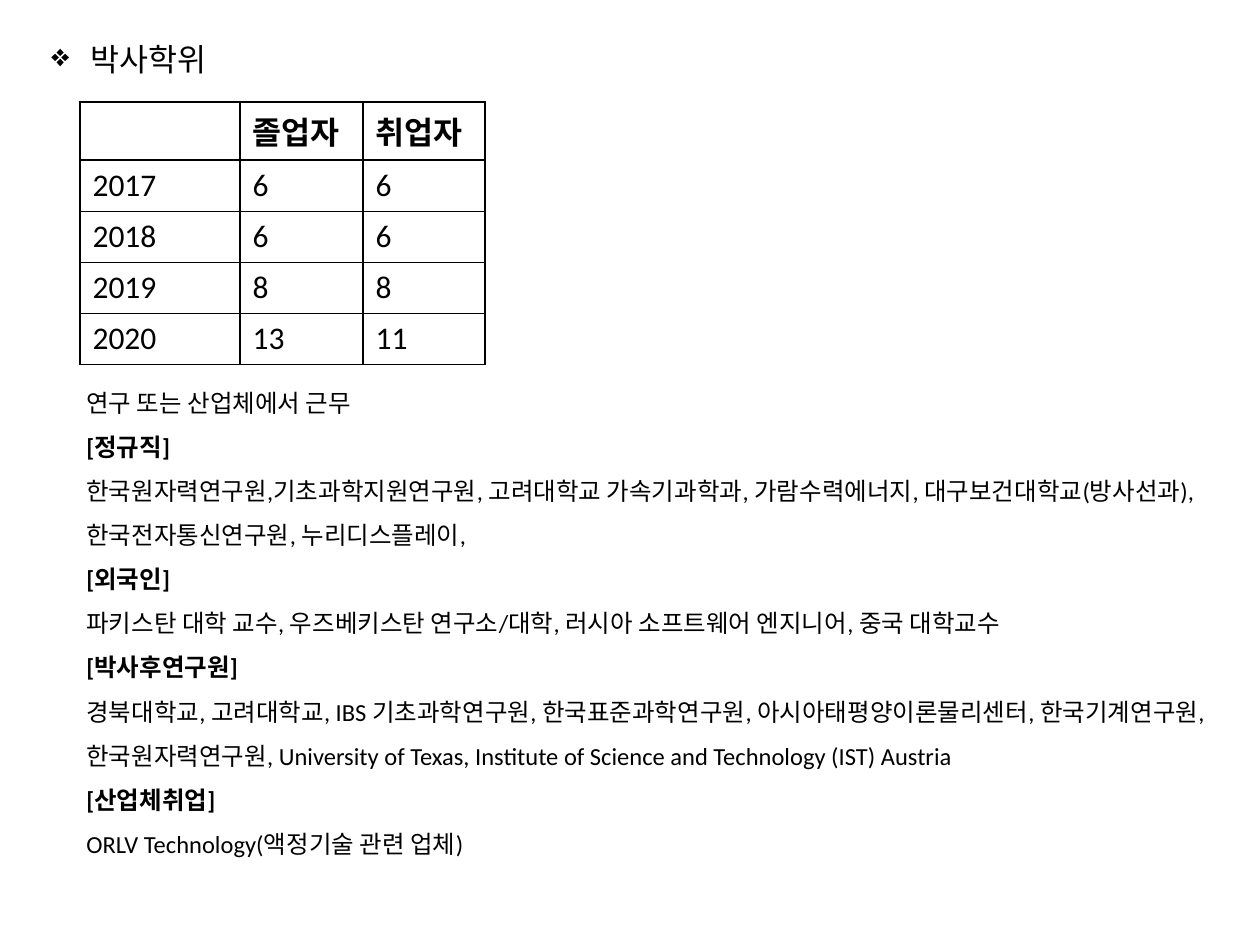
"""Build the slide on doctoral graduates and where they work."""
from lxml.etree import SubElement
from pptx import Presentation
from pptx.dml.color import RGBColor
from pptx.enum.text import MSO_AUTO_SIZE as AutoSize
from pptx.oxml.ns import qn
from pptx.util import Pt

SCALE = 914400 / 126
BLACK = RGBColor(0, 0, 0)
FONT = "Calibri"

HEADING = "박사학위"
HEADING_BOX = (39, 34, 193, 50)
HEADING_INDENT = 39

GRADUATES = [
    ("", "졸업자", "취업자"),
    ("2017", "6", "6"),
    ("2018", "6", "6"),
    ("2019", "8", "8"),
    ("2020", "13", "11"),
]
GRADUATES_AT = (80, 102)
COLUMN_WIDTHS = (160, 123, 122)
HEADER_HEIGHT, YEAR_HEIGHT = 52, 50

CAREERS_BOX = (74, 367, 1169, 498)
CAREERS_INTRO = "연구 또는 산업체에서 근무"
CAREERS = [
    ("[정규직]", "한국원자력연구원,기초과학지원연구원, 고려대학교 가속기과학과, 가람수력에너지, "
     "대구보건대학교(방사선과), 한국전자통신연구원, 누리디스플레이,"),
    ("[외국인]", "파키스탄 대학 교수, 우즈베키스탄 연구소/대학, 러시아 소프트웨어 엔지니어, 중국 대학교수"),
    ("[박사후연구원]", "경북대학교, 고려대학교, IBS 기초과학연구원, 한국표준과학연구원, "
     "아시아태평양이론물리센터, 한국기계연구원, 한국원자력연구원, University of Texas, "
     "Institute of Science and Technology (IST) Austria"),
    ("[산업체취업]", "ORLV Technology(액정기술 관련 업체)"),
]


def px(length):
    return round(length * SCALE)


def write(paragraph, text, size, bold=False):
    paragraph.text = text
    formats = {"name": FONT, "size": Pt(size), "bold": bold}
    for font in [paragraph.font] + [run.font for run in paragraph.runs]:
        for key, value in formats.items():
            setattr(font, key, value)
        font.color.rgb = BLACK


def add_frame(slide, box, wrap):
    frame = slide.shapes.add_textbox(*map(px, box)).text_frame
    for key, value in {"word_wrap": wrap, "auto_size": AutoSize.SHAPE_TO_FIT_TEXT}.items():
        setattr(frame, key, value)
    return frame


def add_borders(cell):
    properties = cell._tc.get_or_add_tcPr()
    for side in ("a:lnL", "a:lnR", "a:lnT", "a:lnB"):
        line = SubElement(properties, qn(side), w=str(Pt(1)))
        fill = SubElement(line, qn("a:solidFill"))
        SubElement(fill, qn("a:srgbClr"), val=str(BLACK))


def add_heading(slide):
    paragraph = add_frame(slide, HEADING_BOX, False).paragraphs[0]
    write(paragraph, HEADING, 18)
    properties = paragraph._p.get_or_add_pPr()
    properties.set("marL", str(px(HEADING_INDENT)))
    properties.set("indent", str(-px(HEADING_INDENT)))
    bullet = SubElement(properties, qn("a:buChar"), char="❖")
    properties.insert(0, bullet)


def add_graduates(slide):
    heights = [HEADER_HEIGHT] + [YEAR_HEIGHT] * (len(GRADUATES) - 1)
    size = (sum(COLUMN_WIDTHS), sum(heights))
    table = slide.shapes.add_table(
        len(GRADUATES), len(COLUMN_WIDTHS), *map(px, GRADUATES_AT + size)).table
    for key in ("first_row", "horz_banding"):
        setattr(table, key, False)
    for column, width in zip(table.columns, COLUMN_WIDTHS):
        column.width = px(width)
    for index, (row, height, values) in enumerate(zip(table.rows, heights, GRADUATES)):
        row.height = px(height)
        for cell, value in zip(row.cells, values):
            write(cell.text_frame.paragraphs[0], value, 18, index == 0)
            add_borders(cell)
            cell.fill.background()


def add_careers(slide):
    frame = add_frame(slide, CAREERS_BOX, True)
    lines = [(CAREERS_INTRO, False)]
    for group, places in CAREERS:
        lines += [(group, True), (places, False)]
    for index, (text, bold) in enumerate(lines):
        paragraph = frame.add_paragraph() if index else frame.paragraphs[0]
        write(paragraph, text, 14, bold)
        paragraph.line_spacing = 1.5


def main():
    deck = Presentation()
    deck.slide_width, deck.slide_height = px(1260), px(945)
    slide = deck.slides.add_slide(deck.slide_layouts[6])
    add_graduates(slide)
    add_heading(slide)
    add_careers(slide)
    deck.save("out.pptx")


if __name__ == "__main__":
    main()
